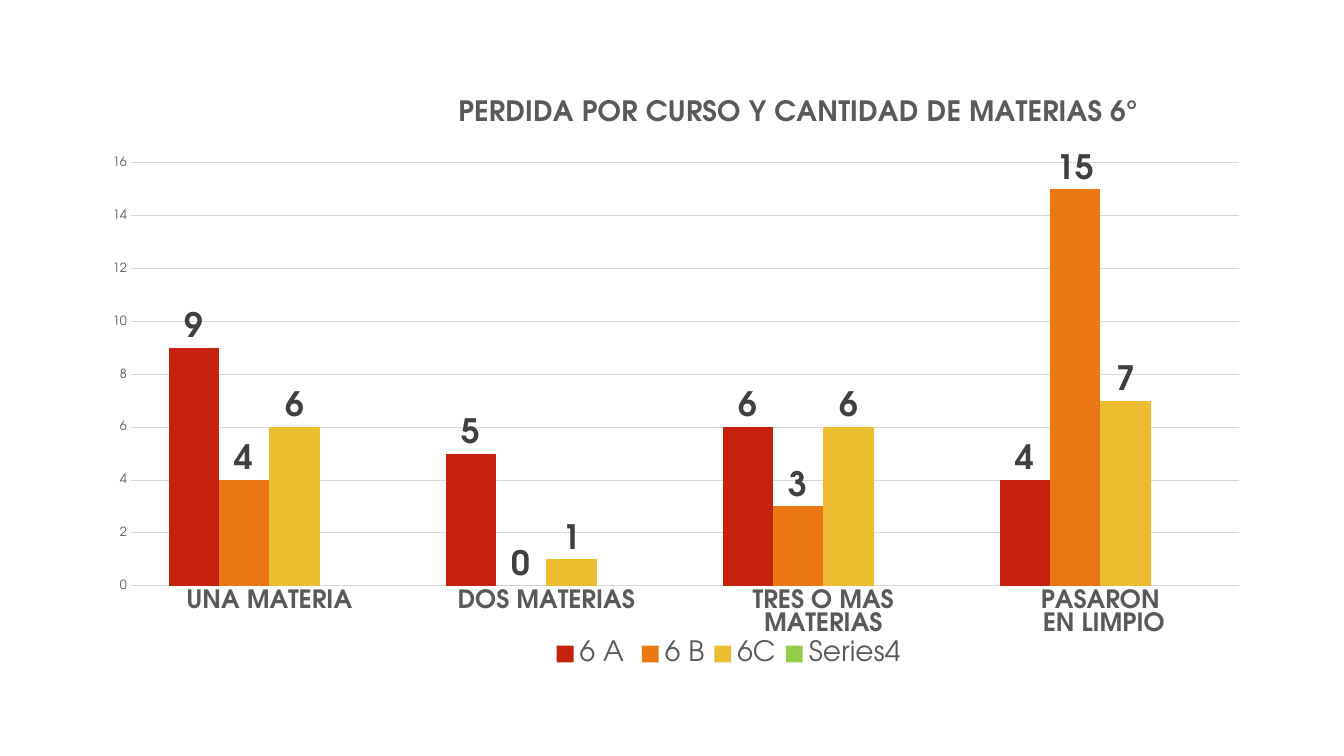
from dataclasses import dataclass
from typing import Optional

from lxml import etree
from pptx import Presentation
from pptx import util as u
from pptx.chart.data import CategoryChartData
from pptx.dml.color import RGBColor
from pptx.enum import chart as ce
from pptx.oxml import ns

FONT = "TeX Gyre Adventor"
GREY = "595959"
CATEGORIES = ["UNA MATERIA", "DOS MATERIAS", "TRES O MAS MATERIAS", "PASARON\n EN LIMPIO"]


@dataclass
class Course:
    name: str
    values: list[Optional[int]]
    color: str
    label_size: int = 24
    label_bold: bool = True


COURSES = [
    Course("6 A ", [9, 5, 6, 4], "C4220D"),
    Course("6 B", [4, 0, 3, 15], "EB7712"),
    Course("6C", [6, 1, 6, 7], "ECBD31"),
    Course("Series4", [None] * 4, "92CE4A", 9, False),
]


def rgb(color: str) -> RGBColor:
    return RGBColor.from_string(color)


def style(font, size: float, color: str, bold: bool = False) -> None:
    font.name = FONT
    font.size = u.Pt(size)
    font.bold = bold
    font.color.rgb = rgb(color)


def place(parent, index: int, inner: bool = False, **fractions: float) -> None:
    for old in parent.findall(ns.qn("c:layout")):
        parent.remove(old)
    layout = etree.Element(ns.qn("c:layout"))
    manual = etree.SubElement(layout, ns.qn("c:manualLayout"))
    if inner:
        etree.SubElement(manual, ns.qn("c:layoutTarget"), val="inner")
    for mode in ("xMode", "yMode"):
        etree.SubElement(manual, ns.qn(f"c:{mode}"), val="edge")
    for key, value in fractions.items():
        etree.SubElement(manual, ns.qn(f"c:{key}"), val=str(value))
    parent.insert(index, layout)


def style_axis(axis, size: float, bold: bool) -> None:
    axis.major_tick_mark = axis.minor_tick_mark = ce.XL_TICK_MARK.NONE
    axis.format.line.fill.background()
    style(axis.tick_labels.font, size, GREY, bold)


def style_series(series, course: Course) -> None:
    series.format.fill.solid()
    series.format.fill.fore_color.rgb = rgb(course.color)
    series.invert_if_negative = False
    labels = series.data_labels
    labels.show_value = True
    labels.position = ce.XL_LABEL_POSITION.OUTSIDE_END
    style(labels.font, course.label_size, "404040", course.label_bold)


def add_course_chart(slide) -> None:
    data = CategoryChartData()
    data.categories = CATEGORIES
    for course in COURSES:
        data.add_series(course.name, course.values)
    chart = slide.shapes.add_chart(
        ce.XL_CHART_TYPE.COLUMN_CLUSTERED,
        u.Inches(0.89), u.Inches(0.85), u.Inches(11.63), u.Inches(6.03), data,
    ).chart
    style(chart.font, 10, "000000")

    chart.has_title = True
    r = chart.chart_title.text_frame.paragraphs[0].add_run()
    r.text = "PERDIDA POR CURSO Y CANTIDAD DE MATERIAS 6°"
    style(r.font, 20, GREY, True)
    chart.chart_title.include_in_layout = False
    place(chart.chart_title._element, 1, x=0.31, y=0.01)

    plot = chart.plots[0]
    plot.gap_width = 150
    plot.overlap = 0
    plot.vary_by_categories = False
    for series, course in zip(plot.series, COURSES):
        style_series(series, course)
    place(chart._chartSpace.chart.plotArea, 0, True, x=0.035, y=0.127, w=0.945, h=0.696)

    style_axis(chart.category_axis, 18, True)
    axis = chart.value_axis
    style_axis(axis, 9, False)
    axis.minimum_scale, axis.maximum_scale, axis.major_unit = 0, 16, 2
    axis.has_major_gridlines = True
    line = axis.major_gridlines.format.line
    line.color.rgb = rgb("D9D9D9")
    line.width = u.Pt(0.75)

    chart.has_legend = True
    chart.legend.position = ce.XL_LEGEND_POSITION.BOTTOM
    chart.legend.include_in_layout = False
    style(chart.legend.font, 20, GREY)
    place(chart.legend._element, 1, x=0.39, y=0.9, w=0.31, h=0.07)


def main() -> None:
    prs = Presentation()
    prs.slide_width, prs.slide_height = u.Inches(13.33), u.Inches(7.5)
    slide = prs.slides.add_slide(prs.slide_layouts[6])
    add_course_chart(slide)
    prs.save("out.pptx")


if __name__ == "__main__":
    main()
